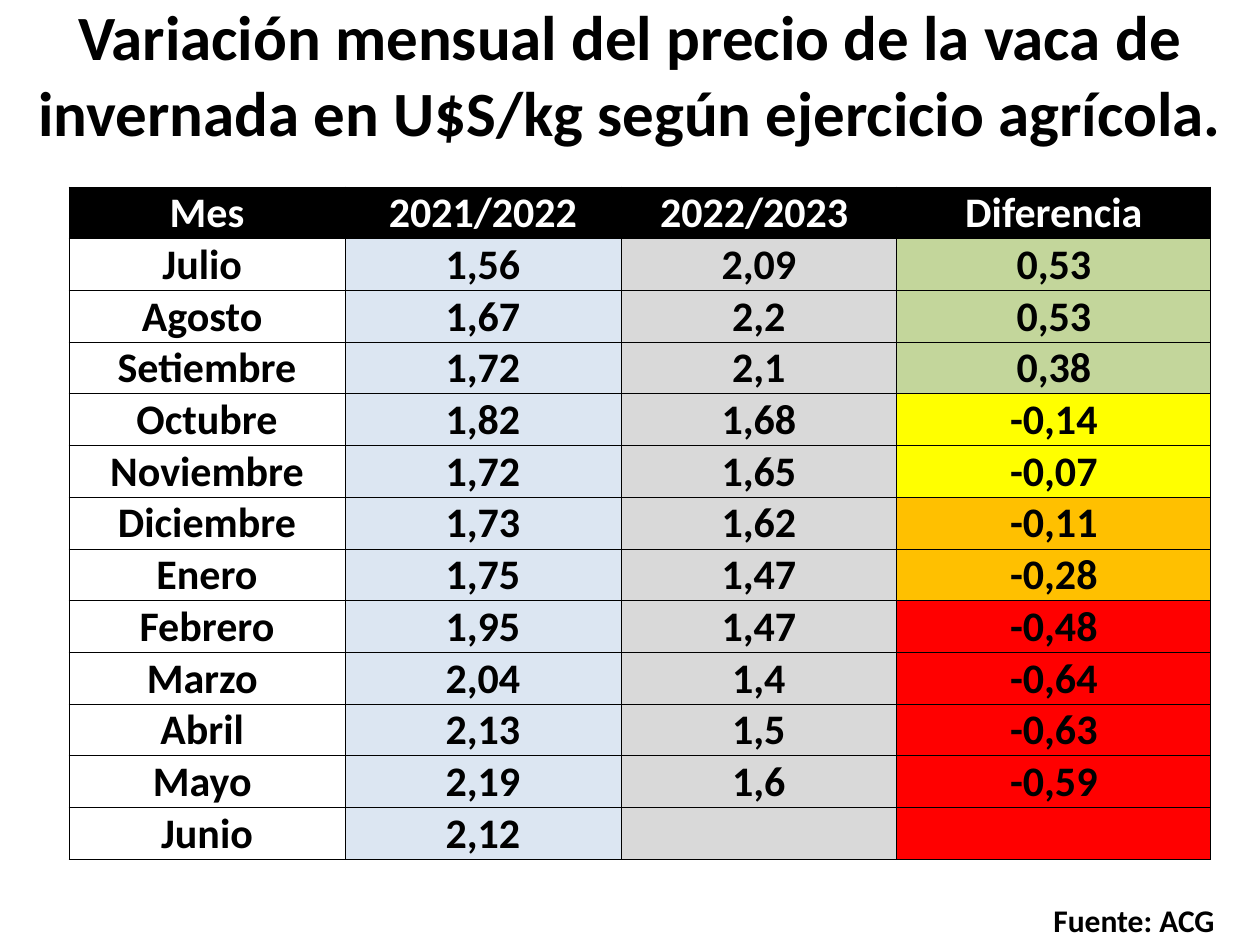
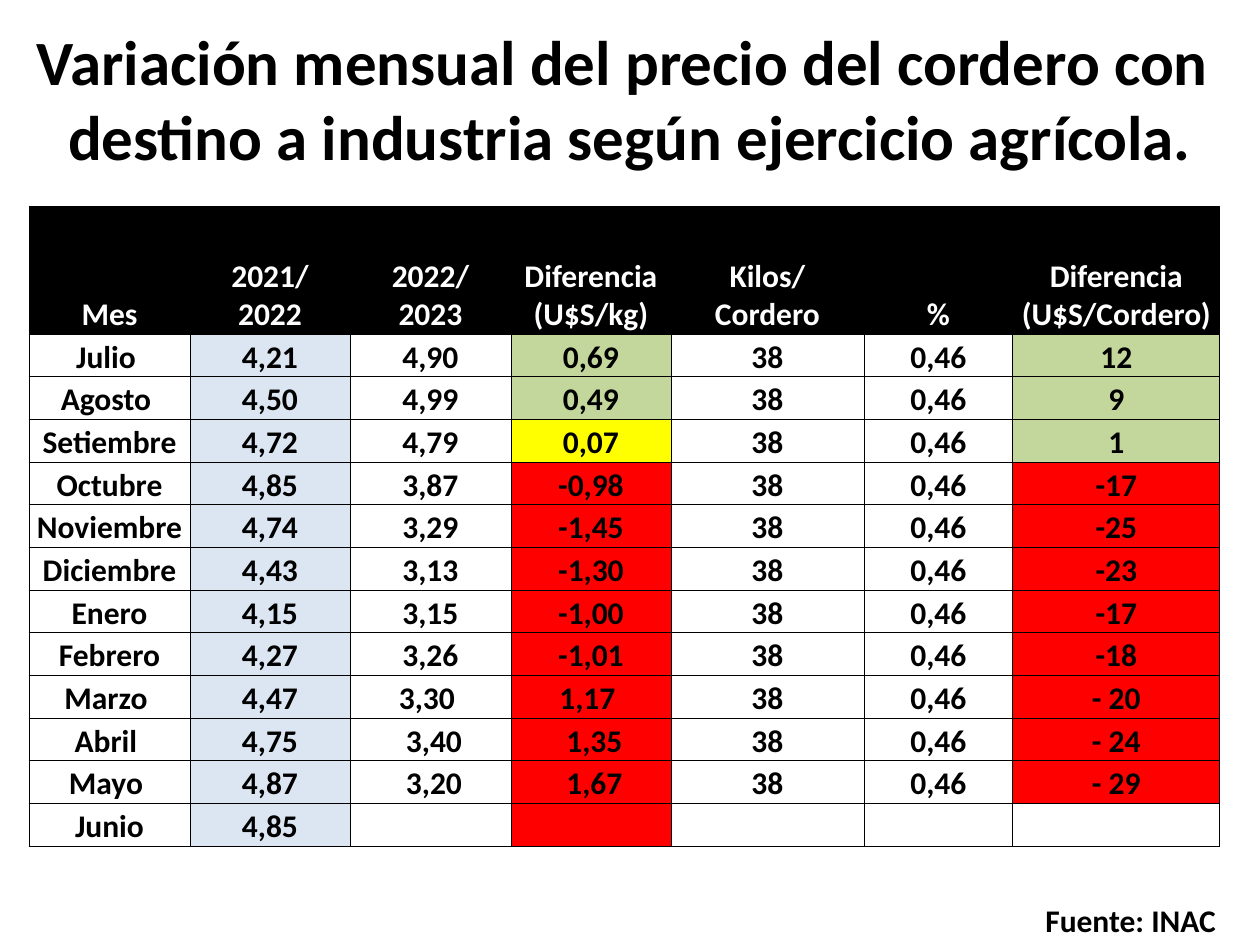
from dataclasses import dataclass

from lxml import etree
from pptx import Presentation
from pptx.dml.color import RGBColor
from pptx.enum.text import MSO_ANCHOR, MSO_AUTO_SIZE, PP_ALIGN
from pptx.oxml.ns import qn

PX = 914400 / 126
CENTER, LEFT = PP_ALIGN.CENTER, PP_ALIGN.LEFT
MIDDLE, BOTTOM = MSO_ANCHOR.MIDDLE, MSO_ANCHOR.BOTTOM
NO_FIT = MSO_AUTO_SIZE.NONE
PT = 12700
TITLE_ONLY = 5


@dataclass(frozen=True)
class Theme:
    font: str = "Calibri"
    black: str = "000000"
    white: str = "FFFFFF"
    blue: str = "DCE6F2"
    gray: str = "D9D9D9"
    green: str = "C3D69B"
    yellow: str = "FFFF00"
    orange: str = "FFC000"
    red: str = "FF0000"
    title: int = 36
    large: int = 24
    small: int = 18
    rule: float = 0.5


T = Theme()
# One letter per cell, read down a column
CODES = {"W": T.white, "B": T.blue, "S": T.gray, "G": T.green,
         "Y": T.yellow, "O": T.orange, "R": T.red}

MONTHS = ["Julio ", "Agosto ", "Setiembre", "Octubre", "Noviembre", "Diciembre",
          "Enero", "Febrero", "Marzo ", "Abril ", "Mayo ", "Junio"]

# Columns: heading, width, values, fill codes
COW = [
    ("Mes", 276, MONTHS, "W" * 12),
    ("2021/2022", 276, ["1,56", "1,67", "1,72", "1,82", "1,72", "1,73", "1,75",
                        "1,95", "2,04", "2,13", "2,19", "2,12"], "B" * 12),
    ("2022/2023 ", 276, ["2,09", "2,2", "2,1", "1,68", "1,65", "1,62", "1,47",
                         "1,47", "1,4", "1,5", "1,6", ""], "S" * 12),
    ("Diferencia", 314, ["0,53", "0,53", "0,38", "-0,14", "-0,07", "-0,11", "-0,28",
                         "-0,48", "-0,64", "-0,63", "-0,59", ""], "GGGYYOORRRRR"),
]
LAMB = [
    ("Mes", 161, MONTHS, "W" * 12),
    ("2021/\n2022", 160, ["4,21", "4,50", "4,72", "4,85", "4,74", "4,43", "4,15",
                          "4,27", "4,47", "4,75", "4,87", "4,85"], "B" * 12),
    ("2022/\n2023", 161, ["4,90", "4,99", "4,79", "3,87", "3,29", "3,13", "3,15",
                          "3,26", "3,30 ", " 3,40", " 3,20", ""], "W" * 12),
    ("Diferencia\n(U$S/kg)", 160, ["0,69", "0,49", "0,07", "-0,98", "-1,45", "-1,30",
                                   "-1,00", "-1,01", "1,17 ", " 1,35", " 1,67", ""],
     "GGYRRRRRRRRR"),
    ("Kilos/\nCordero", 193, ["38"] * 11 + [""], "W" * 12),
    ("%", 149, ["0,46"] * 11 + [""], "W" * 12),
    ("Diferencia\n(U$S/Cordero)", 207, ["12", "9", "1", "-17", "-25", "-23", "-17",
                                        "-18", "- 20", "- 24", "- 29", ""],
     "GGGRRRRRRRRW"),
]


def px(n):
    return round(n * PX)


def style(frame, size, color=T.black, align=CENTER):
    for para in frame.paragraphs:
        para.alignment = align
        para.font.name = T.font
        para.font.size = size * PT
        para.font.bold = True
        para.font.color.rgb = RGBColor.from_string(color)


def add_title(slide, text, top, height):
    title = slide.shapes.title
    title.left, title.top = 0, px(top)
    title.width, title.height = px(1260), px(height)
    frame = title.text_frame
    frame.text = text
    frame.auto_size = NO_FIT
    frame.vertical_anchor = MIDDLE
    style(frame, T.title)


def add_source(slide, name, left):
    box = slide.shapes.add_textbox(px(left), px(895), px(1260 - left), px(50))
    box.text_frame.text = f"Fuente: {name}"
    box.text_frame.word_wrap = False
    style(box.text_frame, T.small, align=LEFT)


def add_rules(cell):
    props = cell._tc.get_or_add_tcPr()
    for side in ("a:lnL", "a:lnR", "a:lnT", "a:lnB"):
        line = etree.SubElement(props, qn(side), w=str(int(T.rule * PT)))
        fill = etree.SubElement(line, qn("a:solidFill"))
        etree.SubElement(fill, qn("a:srgbClr"), val=T.black)


def fill_cell(cell, text, size, color, back):
    add_rules(cell)
    cell.fill.solid()
    cell.fill.fore_color.rgb = RGBColor.from_string(back)
    cell.margin_left = cell.margin_right = cell.margin_top = px(1)
    cell.margin_bottom = 0
    cell.vertical_anchor = BOTTOM
    cell.text_frame.text = text
    style(cell.text_frame, size, color)


def add_prices(slide, cols, left, top, height, head, size):
    count = len(MONTHS) + 1
    width = sum(col[1] for col in cols)
    table = slide.shapes.add_table(count, len(cols), px(left), px(top),
                                   px(width), px(height)).table
    table.first_row = table.horz_banding = False
    for row in table.rows:
        row.height = px((height - head) / len(MONTHS))
    table.rows[0].height = px(head)
    for c, (label, wide, values, codes) in enumerate(cols):
        table.columns[c].width = px(wide)
        fill_cell(table.cell(0, c), label, size, T.white, T.black)
        for r, (value, code) in enumerate(zip(values, codes), 1):
            fill_cell(table.cell(r, c), value, size, T.black, CODES[code])


def main():
    deck = Presentation()
    deck.slide_width, deck.slide_height = px(1260), px(945)
    layout = deck.slide_layouts[TITLE_ONLY]

    # Cow prices
    slide = deck.slides.add_slide(layout)
    add_title(slide, "Variación mensual del precio de la vaca de invernada "
              "en U$S/kg según ejercicio agrícola.", 0, 147)
    add_source(slide, "ACG", 1041)
    add_prices(slide, COW, 69, 187, 672, 51, T.large)

    # Lamb prices
    slide = deck.slides.add_slide(layout)
    add_title(slide, "Variación mensual del precio del cordero con \v"
              "destino a industria según ejercicio agrícola.", 38, 120)
    add_source(slide, "INAC", 1033)
    add_prices(slide, LAMB, 29, 206, 640, 128, T.small)

    deck.save("out.pptx")


if __name__ == "__main__":
    main()
